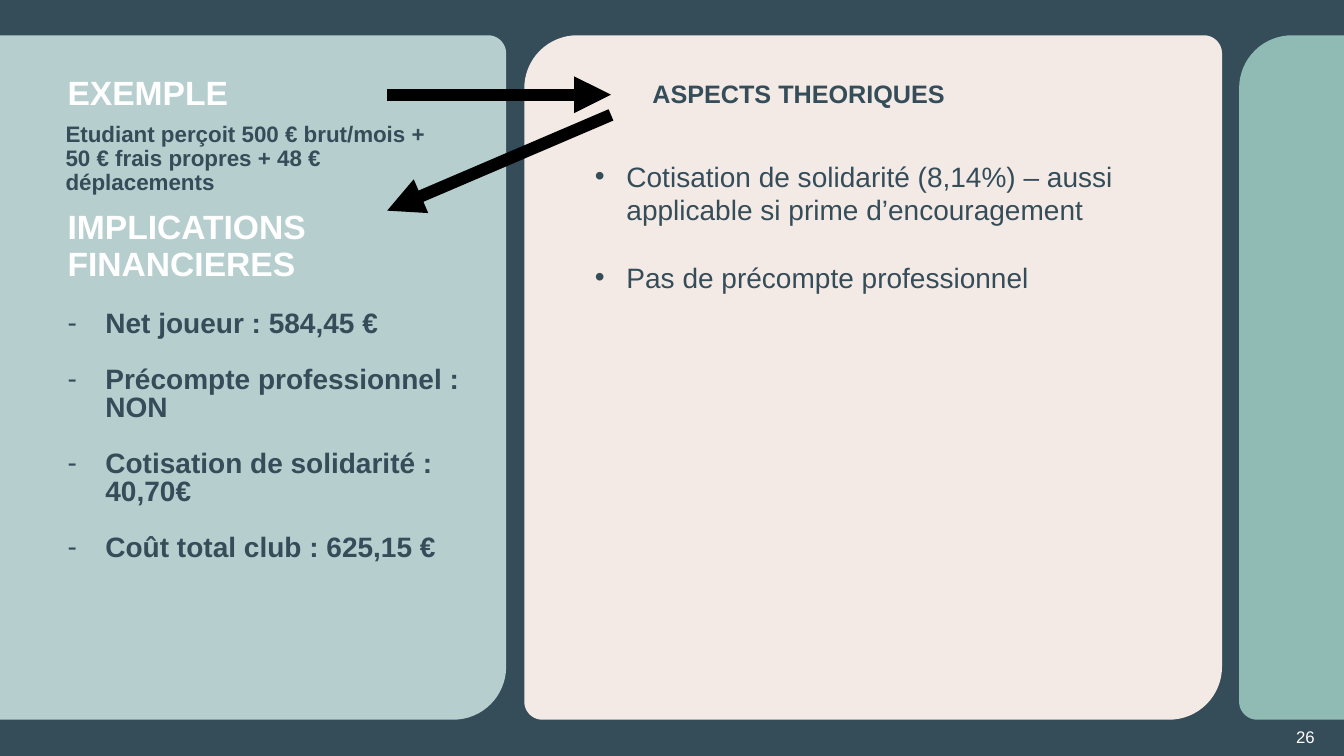
from math import cos, pi, sin

from lxml.etree import SubElement
from pptx import Presentation
from pptx.dml.color import RGBColor
from pptx.enum.shapes import MSO_CONNECTOR
from pptx.enum.text import MSO_ANCHOR, MSO_AUTO_SIZE, PP_ALIGN
from pptx.oxml.ns import qn
from pptx.util import Inches, Pt

SLATE = RGBColor(0x35, 0x4C, 0x59)
MIST = RGBColor(0xB7, 0xCE, 0xCF)
SAGE = RGBColor(0x90, 0xBB, 0xB5)
CREAM = RGBColor(0xF3, 0xEA, 0xE6)
WHITE = RGBColor(0xFF, 0xFF, 0xFF)
BLACK = RGBColor(0, 0, 0)

FONT = "Arial"
CELL = Inches(0.1)
COLUMNS, ROWS = 133.3, 75
PANEL_TOP, PANEL_BOTTOM = 3.5, 71.4
WIDE, TIGHT, SQUARE = 5.25, 1.8, 0
ARC_STEPS = 16


def grid(*cells):
    return [round(cell * CELL) for cell in cells]


class SlideBuilder:
    def __init__(self, page):
        self.page = page
        self.page.background.fill.solid()
        self.page.background.fill.fore_color.rgb = SLATE

    def panel(self, left, right, color, radii):
        top, bottom = PANEL_TOP, PANEL_BOTTOM
        corners = [(left, top, 1, 1), (right, top, -1, 1),
                   (right, bottom, -1, -1), (left, bottom, 1, -1)]
        outline = []
        for index, ((x, y, inward_x, inward_y), radius) in enumerate(zip(corners, radii)):
            steps = ARC_STEPS if radius else 0
            for step in range(steps + 1):
                angle = pi + (index + step / ARC_STEPS) * pi / 2
                outline.append(grid(x + radius * (inward_x + cos(angle)),
                                    y + radius * (inward_y + sin(angle))))
        builder = self.page.shapes.build_freeform(*outline[0])
        builder.add_line_segments(outline[1:], close=True)
        shape = builder.convert_to_shape()
        shape.shadow.inherit = False
        shape.fill.solid()
        shape.fill.fore_color.rgb = color
        shape.line.fill.background()
        shape.element.getparent().insert(2, shape.element)

    def frame(self, box, area, insets=(0, 0), anchor=MSO_ANCHOR.TOP):
        box.left, box.top, box.width, box.height = grid(*area)
        frame = box.text_frame
        frame.word_wrap = True
        frame.auto_size = MSO_AUTO_SIZE.NONE
        frame.vertical_anchor = anchor
        frame.margin_left = frame.margin_right = grid(insets[0])[0]
        frame.margin_top = frame.margin_bottom = grid(insets[1])[0]
        return frame

    def placeholder(self, index, area, insets=(0, 0)):
        return self.frame(self.page.placeholders[index], area, insets)

    def paragraph(self, para, text, size, color, bold=False, spacing=1.0,
                  before=0, bullet=None, indent=0, align=PP_ALIGN.LEFT):
        para.text = text
        para.alignment = align
        para.line_spacing = spacing
        para.space_before = Pt(before)
        para.space_after = Pt(0)
        properties = para._p.get_or_add_pPr()
        margin = grid(indent)[0]
        properties.set("marL", str(margin))
        properties.set("indent", str(-margin))
        if bullet:
            SubElement(properties, qn("a:buChar")).set("char", bullet)
        else:
            SubElement(properties, qn("a:buNone"))
        for span in para.runs:
            span.font.name = FONT
            span.font.size = Pt(size)
            span.font.bold = bold
            span.font.color.rgb = color

    def bullets(self, frame, items, gap, **style):
        for item in items:
            started = bool(frame.text)
            para = frame.add_paragraph() if started else frame.paragraphs[0]
            self.paragraph(para, item, 20, SLATE, before=gap if started else 0, **style)

    def page_number(self, number, area):
        box = self.page.shapes.add_textbox(*grid(*area))
        frame = self.frame(box, area, anchor=MSO_ANCHOR.MIDDLE)
        self.paragraph(frame.paragraphs[0], number, 12, WHITE, align=PP_ALIGN.RIGHT)

    def arrow(self, start, end):
        connector = self.page.shapes.add_connector(
            MSO_CONNECTOR.STRAIGHT, *grid(*start, *end))
        connector.line.color.rgb = BLACK
        connector.line.width = Pt(8.75)
        properties = connector.element.spPr
        SubElement(properties.find(qn("a:ln")), qn("a:tailEnd")).set("type", "triangle")
        SubElement(properties, qn("a:effectLst"))


def main():
    deck = Presentation()
    deck.slide_width, deck.slide_height = grid(COLUMNS, ROWS)
    slide = SlideBuilder(deck.slides.add_slide(deck.slide_layouts[4]))

    slide.panel(0, 50.2, MIST, (SQUARE, TIGHT, WIDE, SQUARE))
    slide.panel(52, 121.2, CREAM, (WIDE, TIGHT, WIDE, TIGHT))
    slide.panel(122.9, COLUMNS, SAGE, (WIDE, SQUARE, SQUARE, TIGHT))

    example = slide.placeholder(0, (6.7, 7.6, 38.1, 4))
    slide.paragraph(example.paragraphs[0], "EXEMPLE", 24, WHITE, bold=True, spacing=0.9)

    situation = slide.placeholder(1, (6.5, 12.2, 38.1, 11))
    slide.paragraph(situation.paragraphs[0],
                    "Etudiant perçoit 500 € brut/mois + 50 € frais propres + 48 € déplacements",
                    16, SLATE, bold=True, spacing=0.9)

    implications = slide.placeholder(2, (6.7, 20.9, 43.3, 48.1))
    slide.paragraph(implications.paragraphs[0], "IMPLICATIONS FINANCIERES",
                    24, WHITE, bold=True, spacing=0.9)
    slide.bullets(implications, [
        "Net joueur : 584,45 €",
        "Précompte professionnel : NON",
        "Cotisation de solidarité : 40,70€",
        "Coût total club : 625,15 €",
    ], gap=20, bold=True, spacing=Pt(20), bullet="-", indent=3.75)

    theory = slide.placeholder(3, (63.7, 7.3, 55.8, 4), insets=(1, 0.5))
    slide.paragraph(theory.paragraphs[0], "ASPECTS THEORIQUES", 18, SLATE, bold=True)

    rules = slide.placeholder(4, (58, 15.3, 59.2, 21.2), insets=(1, 0.5))
    slide.bullets(rules, [
        "Cotisation de solidarité (8,14%) – aussi applicable si prime d’encouragement",
        "Pas de précompte professionnel",
    ], gap=24, bullet="•", indent=3.13)

    slide.page_number("26", (122.2, 72.1, 8.2, 2))
    slide.arrow((60.6, 11.4), (38.4, 20.9))
    slide.arrow((38.4, 9.4), (60.6, 9.4))
    deck.save("out.pptx")


if __name__ == "__main__":
    main()
